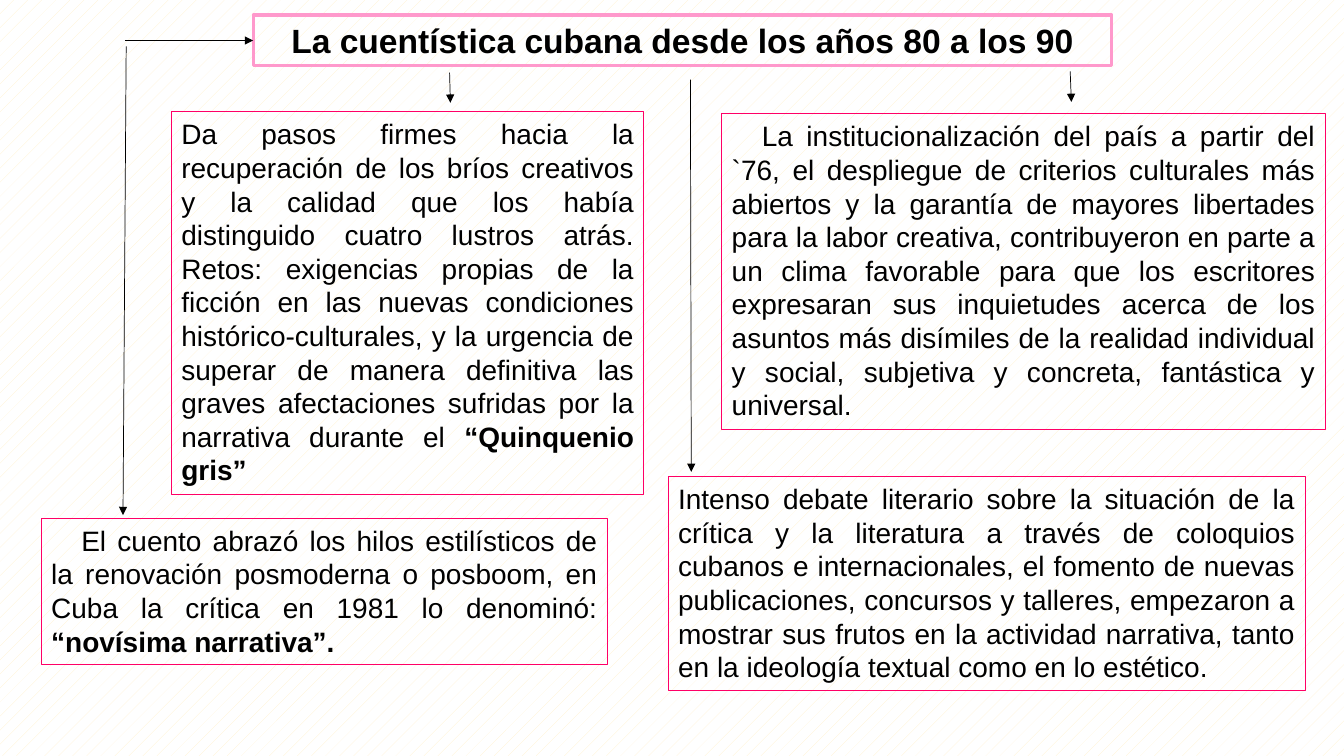
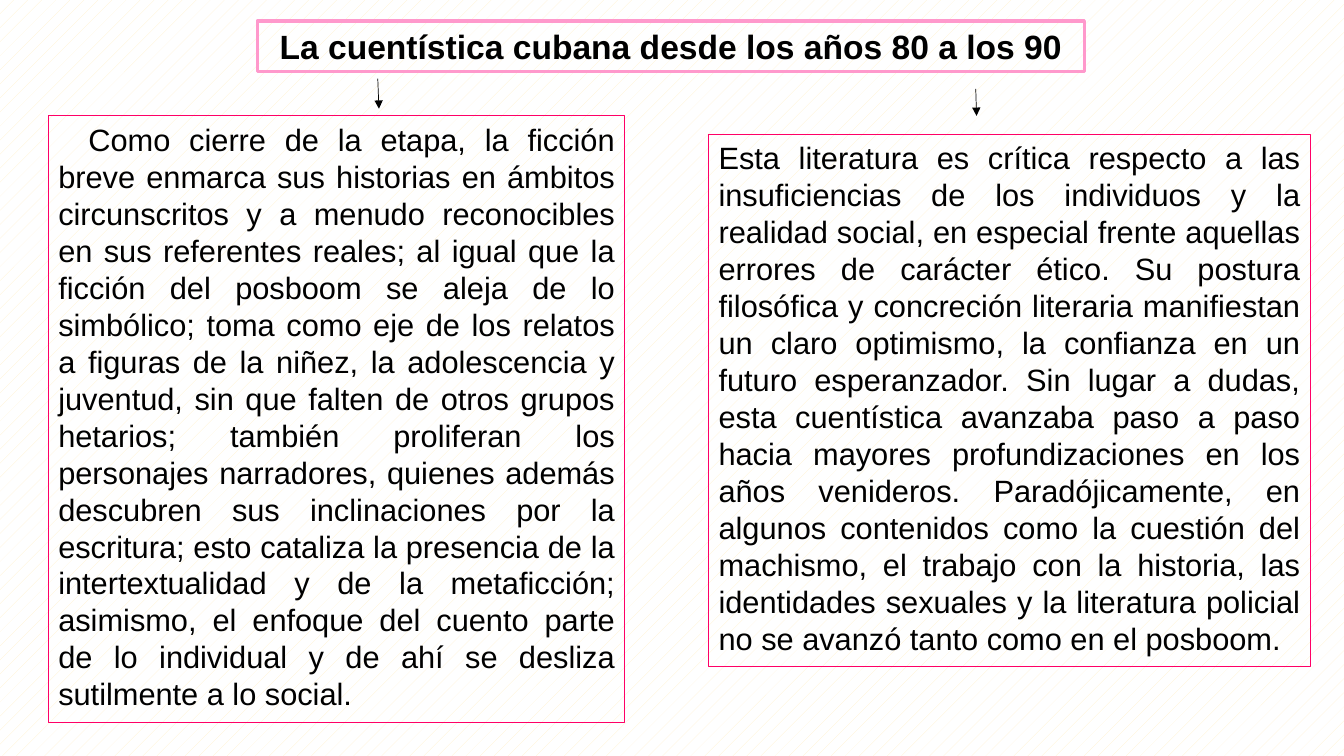
"""Build two slides on the Cuban short story from the 80s to the 90s."""
from lxml import etree
from pptx import Presentation
from pptx.dml.color import RGBColor
from pptx.enum.dml import MSO_PATTERN
from pptx.enum.shapes import MSO_CONNECTOR
from pptx.enum.text import MSO_AUTO_SIZE, PP_ALIGN
from pptx.oxml.ns import qn
from pptx.util import Cm, Pt

STRAIGHT = MSO_CONNECTOR.STRAIGHT
DOTS = MSO_PATTERN.PERCENT_5
CENTER = PP_ALIGN.CENTER
JUSTIFY = PP_ALIGN.JUSTIFY
GROW = MSO_AUTO_SIZE.SHAPE_TO_FIT_TEXT
LEFT_SIDE = 1

FONT = "Arial"
TITLE = "La cuentística cubana desde los años 80 a los 90"
TITLE_HEIGHT = 1.28
INDENT = 0.76
COLORS = {
    "text": "000000",
    "arrow": "000000",
    "title_border": "FF99CC",
    "box_border": "FF0066",
    "paper": "FFFFFF",
    "paper_dots": "FFF2CC",
}

RECOVERY = (
    "Da pasos firmes hacia la recuperación de los bríos creativos y la calidad "
    "que los había distinguido cuatro lustros atrás. Retos: exigencias propias "
    "de la ficción en las nuevas condiciones histórico-culturales, y la "
    "urgencia de superar de manera definitiva las graves afectaciones sufridas "
    "por la narrativa durante el "
)
POSTBOOM = (
    "El cuento abrazó los hilos estilísticos de la renovación posmoderna o "
    "posboom, en Cuba la crítica en 1981 lo denominó: "
)
DEBATE = (
    "Intenso debate literario sobre la situación de la crítica y la literatura "
    "a través de coloquios cubanos e internacionales, el fomento de nuevas "
    "publicaciones, concursos y talleres, empezaron a mostrar sus frutos en la "
    "actividad narrativa, tanto en la ideología textual como en lo estético."
)
INSTITUTIONS = (
    "La institucionalización del país a partir del `76, el despliegue de "
    "criterios culturales más abiertos y la garantía de mayores libertades "
    "para la labor creativa, contribuyeron en parte a un clima favorable para "
    "que los escritores expresaran sus inquietudes acerca de los asuntos más "
    "disímiles de la realidad individual y social, subjetiva y concreta, "
    "fantástica y universal."
)
CLOSING = (
    "Como cierre de la etapa, la ficción breve enmarca sus historias en "
    "ámbitos circunscritos y a menudo reconocibles en sus referentes reales; "
    "al igual que la ficción del posboom se aleja de lo simbólico; toma como "
    "eje de los relatos a figuras de la niñez, la adolescencia y juventud, sin "
    "que falten de otros grupos hetarios; también proliferan los personajes "
    "narradores, quienes además descubren sus inclinaciones por la escritura; "
    "esto cataliza la presencia de la intertextualidad y de la metaficción; "
    "asimismo, el enfoque del cuento parte de lo individual y de ahí se "
    "desliza sutilmente a lo social."
)
CRITIQUE = (
    "Esta literatura es crítica respecto a las insuficiencias de los "
    "individuos y la realidad social, en especial frente aquellas errores de "
    "carácter ético. Su postura filosófica y concreción literaria manifiestan "
    "un claro optimismo, la confianza en un futuro esperanzador. Sin lugar a "
    "dudas, esta cuentística avanzaba paso a paso hacia mayores "
    "profundizaciones en los años venideros. Paradójicamente, en algunos "
    "contenidos como la cuestión del machismo, el trabajo con la historia, las "
    "identidades sexuales y la literatura policial no se avanzó tanto como en "
    "el posboom."
)


def color(name):
    return RGBColor.from_string(COLORS[name])


def set_background(master):
    fill = master.background.fill
    fill.patterned()
    fill.pattern = DOTS
    fill.fore_color.rgb = color("paper_dots")
    fill.back_color.rgb = color("paper")


def add_box(s, at, text, size, border, width, align):
    sp = s.shapes.add_textbox(*map(Cm, at))
    sp.line.color.rgb = color(border)
    sp.line.width = Pt(width)
    tf = sp.text_frame
    tf.word_wrap = True
    tf.auto_size = GROW
    p = tf.paragraphs[0]
    p.text = text
    p.alignment = align
    p.font.name = FONT
    p.font.size = Pt(size)
    p.font.color.rgb = color("text")
    for r in p.runs:
        format_run(r, size)
    return sp


def format_run(r, size, bold=False):
    r.font.name = FONT
    r.font.size = Pt(size)
    r.font.bold = bold
    r.font.color.rgb = color("text")


def add_title(s, left, top, width):
    at = (left, top, width, TITLE_HEIGHT)
    sp = add_box(s, at, TITLE, 24, "title_border", 2.25, CENTER)
    sp.text_frame.paragraphs[0].runs[0].font.bold = True
    return sp


def add_body(s, at, text, size, bold_end="", indent=False):
    sp = add_box(s, at, text, size, "box_border", 0.75, JUSTIFY)
    p = sp.text_frame.paragraphs[0]
    if indent:
        pPr = p._p.get_or_add_pPr()
        pPr.set("marL", "0")
        pPr.set("indent", str(Cm(INDENT)))
    if bold_end:
        r = p.add_run()
        r.text = bold_end
        format_run(r, size, bold=True)


def add_arrow(s, x1, y1, x2, y2):
    c = s.shapes.add_connector(STRAIGHT, Cm(x1), Cm(y1), Cm(x2), Cm(y2))
    c.line.color.rgb = color("arrow")
    c.line.width = Pt(0.5)
    etree.SubElement(c.line._get_or_add_ln(), qn("a:tailEnd"), type="triangle")
    etree.SubElement(c._element.spPr, qn("a:effectLst"))
    return c


def build_context(s):
    title = add_title(s, 6.38, 0.38, 21.64)
    add_body(s, (4.32, 2.82, 11.91, 9.65), RECOVERY, 20, "“Quinquenio gris”")
    add_body(s, (1.04, 13.06, 14.27, 3.68), POSTBOOM, 20,
             "“novísima narrativa”.", indent=True)
    add_body(s, (16.84, 12.01, 16.05, 5.38), DEBATE, 20)
    add_body(s, (18.19, 2.87, 15.21, 7.95), INSTITUTIONS, 20, indent=True)
    for ends in ((3.18, 1.17, 3.1, 12.98), (17.4, 2.01, 17.42, 11.89),
                 (26.97, 1.8, 27, 2.57), (11.33, 1.83, 11.35, 2.59)):
        add_arrow(s, *ends)
    add_arrow(s, 3.15, 1.02, 6.38, 1.02).end_connect(title, LEFT_SIDE)


def build_closing(s):
    add_title(s, 6.48, 0.53, 20.85)
    add_body(s, (1.22, 2.92, 14.53, 15.29), CLOSING, 22, indent=True)
    add_body(s, (17.86, 3.38, 15.16, 13.41), CRITIQUE, 22)
    for ends in ((24.59, 2.24, 24.61, 2.92), (9.52, 1.98, 9.55, 2.74)):
        add_arrow(s, *ends)


def main():
    prs = Presentation()
    prs.slide_width, prs.slide_height = Cm(33.87), Cm(19.05)
    set_background(prs.slide_master)
    blank = prs.slide_layouts[6]
    for build in (build_context, build_closing):
        build(prs.slides.add_slide(blank))
    prs.save("out.pptx")


if __name__ == "__main__":
    main()
